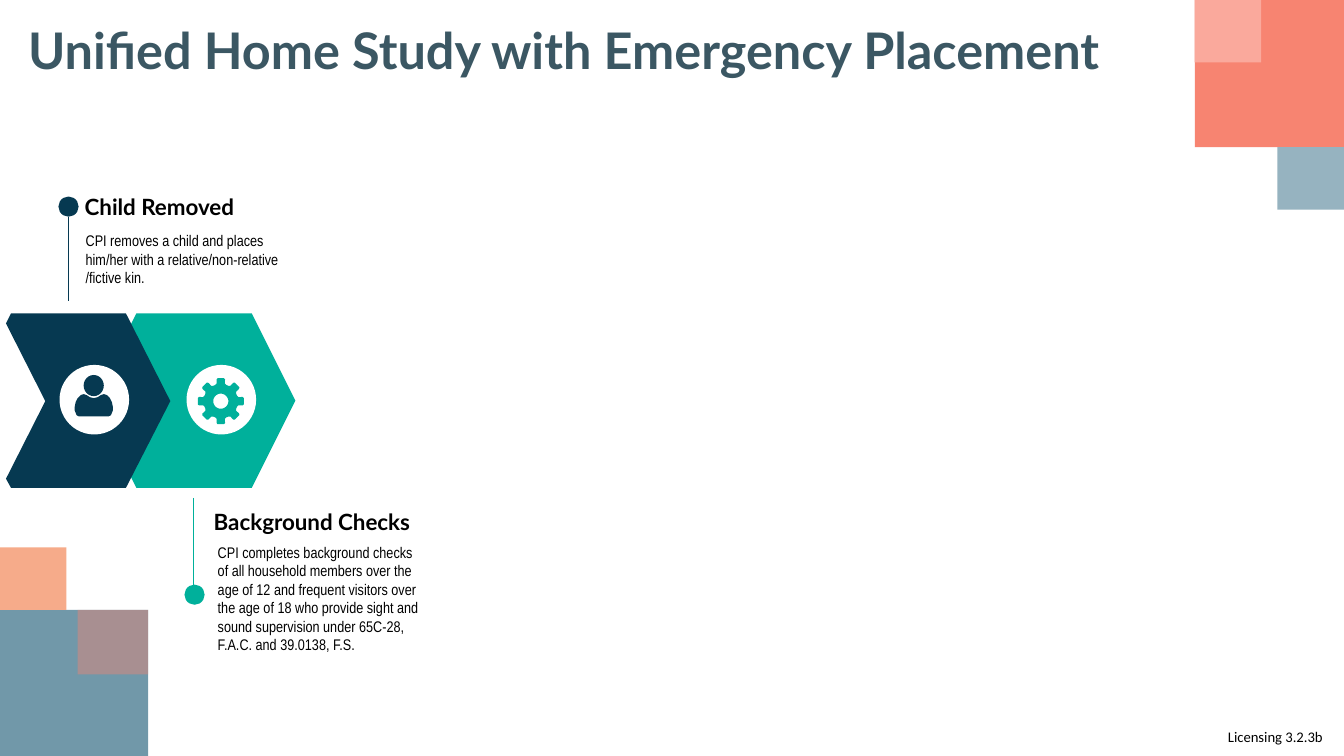
from dataclasses import dataclass
from math import cos, pi, radians, sin

from lxml.etree import SubElement
from pptx import Presentation
from pptx.dml.color import RGBColor
from pptx.enum.shapes import MSO_CONNECTOR, MSO_SHAPE
from pptx.enum.text import MSO_ANCHOR, MSO_AUTO_SIZE
from pptx.oxml.ns import qn
from pptx.util import Inches, Pt


@dataclass(frozen=True)
class Theme:
    navy: str = "063951"
    teal: str = "00B09B"
    white: str = "FFFFFF"
    black: str = "000000"
    title_slate: str = "3B5763"
    slate: str = "7198A9"
    light_slate: str = "96B3C0"
    peach: str = "F6AB8A"
    coral: str = "F78471"
    light_coral: str = "FAA99C"
    heading_font: str = "Lato"
    body_font: str = "Arial Narrow"
    label_font: str = "Calibri"
    title_size: float = 36
    heading_size: float = 16
    body_size: float = 11
    label_size: float = 10.5


class SlideBuilder:
    def __init__(self, page, theme):
        self.page = page
        self.theme = theme

    def paint(self, shape, color, opacity=None):
        shape.shadow.inherit = False
        shape.fill.solid()
        shape.fill.fore_color.rgb = RGBColor.from_string(color)
        shape.line.fill.background()
        if opacity is not None:
            color_element = shape.fill._xPr.find(f"{qn('a:solidFill')}/{qn('a:srgbClr')}")
            SubElement(color_element, qn("a:alpha"), val=str(opacity * 1000))

    def preset(self, kind, left, top, width, height, color, opacity=None):
        shape = self.page.shapes.add_shape(
            kind, Inches(left), Inches(top), Inches(width), Inches(height))
        self.paint(shape, color, opacity)

    def outline(self, contours, color):
        """Fill one shape made of closed contours; inner contours are holes."""
        contours = [[(Inches(x), Inches(y)) for x, y in points] for points in contours]
        builder = self.page.shapes.build_freeform(*contours[0][0])
        for index, points in enumerate(contours):
            if index:
                builder.move_to(*points[0])
            builder.add_line_segments(points[1:], close=True)
        self.paint(builder.convert_to_shape(), color)

    def stem(self, x, top, bottom, color):
        line = self.page.shapes.add_connector(
            MSO_CONNECTOR.STRAIGHT, Inches(x), Inches(top), Inches(x), Inches(bottom))
        line.line.color.rgb = RGBColor.from_string(color)
        line.line.width = Pt(0.5)
        SubElement(line._element.spPr, qn("a:effectLst"))

    def text(self, words, left, top, width, height, font, size, color=None, bold=False,
             anchor=MSO_ANCHOR.MIDDLE, margins=(0.1, 0.1), grow=False):
        box = self.page.shapes.add_textbox(
            Inches(left), Inches(top), Inches(width), Inches(height))
        frame = box.text_frame
        frame.word_wrap = True
        frame.auto_size = MSO_AUTO_SIZE.SHAPE_TO_FIT_TEXT if grow else MSO_AUTO_SIZE.NONE
        frame.vertical_anchor = anchor
        frame.margin_left, frame.margin_right = (Inches(side) for side in margins)
        frame.text = words
        span = frame.paragraphs[0].runs[0]
        span.font.name = font
        span.font.size = Pt(size)
        span.font.bold = bold
        span.font.color.rgb = RGBColor.from_string(color or self.theme.black)

    def heading(self, words, left, top, width):
        self.text(words, left, top, width, 0.37, self.theme.heading_font,
                  self.theme.heading_size, bold=True, margins=(0, 0.1), grow=True)

    def body(self, words, left, top, width, height):
        self.text(words, left, top, width, height, self.theme.body_font,
                  self.theme.body_size, margins=(0, 0), grow=True)

    def person(self, center, top, color):
        self.preset(MSO_SHAPE.OVAL, center - 0.1, top, 0.2, 0.21, color)
        # Half of the shoulders, as (distance from centre, distance below top)
        half = [(0, 0.23), (0.04, 0.22), (0.07, 0.2), (0.1, 0.19), (0.13, 0.2),
                (0.16, 0.23), (0.18, 0.27), (0.19, 0.32), (0.19, 0.35),
                (0.17, 0.4), (0.15, 0.41), (0.12, 0.41)]
        right = [(center + x, top + y) for x, y in half]
        left = [(center - x, top + y) for x, y in reversed(half[1:])]
        self.outline([right + left], color)

    def gear(self, center_x, center_y, color):
        def polar(degrees, radius):
            angle = radians(degrees)
            return center_x + radius * sin(angle), center_y - radius * cos(angle)

        # One tooth, as (angle from its middle, radius)
        tooth = [(-19, 0.17), (-13, 0.18), (-11, 0.22), (-8, 0.23),
                 (8, 0.23), (11, 0.22), (13, 0.18), (19, 0.17)]
        rim = [polar(45 * number + angle, radius)
               for number in range(8) for angle, radius in tooth]
        hole = [polar(-10 * step, 0.075) for step in range(36)]
        self.outline([rim, hole], color)


def main():
    deck = Presentation()
    deck.slide_width, deck.slide_height = Inches(13.33), Inches(7.5)
    theme = Theme()
    page = SlideBuilder(deck.slides.add_slide(deck.slide_layouts[6]), theme)

    # Corner blocks
    for left, top, width, height, color, opacity in [
        (0, 6.05, 1.47, 1.45, theme.slate, None),
        (0, 5.43, 0.66, 0.62, theme.peach, None),
        (0.77, 6.05, 0.7, 0.64, theme.coral, 41),
        (11.85, 0, 1.48, 1.46, theme.coral, None),
        (11.85, 0, 0.66, 0.62, theme.light_coral, None),
        (12.67, 1.46, 0.66, 0.62, theme.light_slate, None),
    ]:
        page.preset(MSO_SHAPE.RECTANGLE, left, top, width, height, color, opacity)

    # Process arrows
    page.preset(MSO_SHAPE.HEXAGON, 0.92, 3.11, 2.01, 1.73, theme.teal)
    page.outline([[(0.11, 3.11), (1.25, 3.11), (1.69, 3.98), (1.25, 4.84),
                   (0.11, 4.84), (0.06, 4.75), (0.45, 3.98), (0.06, 3.21)]], theme.navy)

    # Timeline markers
    page.preset(MSO_SHAPE.OVAL, 1.83, 5.8, 0.2, 0.2, theme.teal)
    page.preset(MSO_SHAPE.OVAL, 0.58, 1.95, 0.2, 0.2, theme.navy)
    page.stem(0.68, 2.15, 2.99, theme.navy)
    page.stem(1.92, 4.94, 5.8, theme.teal)

    # Icons on white discs
    for left in (0.59, 1.85):
        page.preset(MSO_SHAPE.OVAL, left, 3.62, 0.69, 0.69, theme.white)
    page.person(0.93, 3.72, theme.navy)
    page.gear(2.19, 3.98, theme.teal)

    # Title and step texts
    page.text("Unified Home Study with Emergency Placement", 0.18, 0.15, 11.15, 0.68,
              theme.heading_font, theme.title_size, theme.title_slate, bold=True)
    page.heading("Child Removed", 0.84, 1.86, 2.18)
    page.heading("Background Checks", 2.12, 4.99, 2.36)
    page.body("CPI removes a child and places him/her with a relative/non-relative "
              "/fictive kin.", 0.85, 2.24, 2.17, 0.66)
    page.body("CPI completes background checks of all household members over the age of 12 "
              "and frequent visitors over the age of 18 who provide sight and sound "
              "supervision under 65C-28, F.A.C. and 39.0138, F.S.", 2.16, 5.33, 2.06, 1.21)

    # Section label
    page.text("Licensing 3.2.3b", 12.08, 7.17, 1.25, 0.33, theme.label_font,
              theme.label_size, anchor=MSO_ANCHOR.TOP)

    deck.save("out.pptx")


if __name__ == "__main__":
    main()
